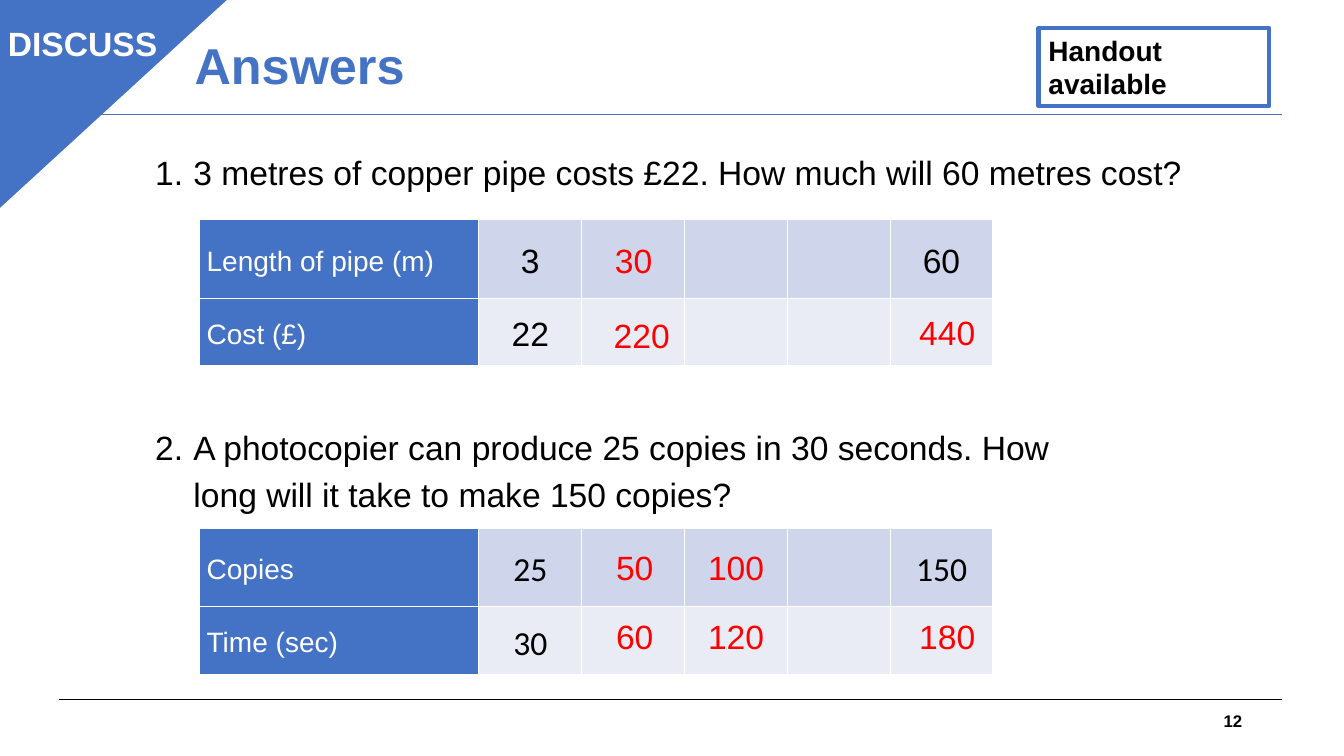
import pptx
import pptx.util
import pptx.dml.color
import pptx.enum.shapes
import pptx.enum.text
import pptx.oxml.ns
from lxml import etree

PX = 9144  # 100 px to the inch
Align = pptx.enum.text.PP_ALIGN
Anchor = pptx.enum.text.MSO_ANCHOR
Shape = pptx.enum.shapes.MSO_SHAPE
qn = pptx.oxml.ns.qn

theme = {
    "blue": "4472C4", "black": "000000", "white": "FFFFFF", "red": "FF0000",
    "bands": ["CFD5EA", "E9EBF5"],
    "font": "Arial", "alt": "Calibri",
    "title": 36, "body": 24, "label": 20, "number": 12,
}


def rgb(name):
    return pptx.dml.color.RGBColor.from_string(theme.get(name, name))


def write(frame, text, size, color, bold=False, align=Align.LEFT, font="font", space=None):
    """Fill a text frame or cell frame with one styled paragraph."""
    frame.text = text
    frame.word_wrap = True
    para = frame.paragraphs[0]
    para.alignment = align
    if space:
        para.line_spacing = space
    if space == 1.15:
        para.space_after = pptx.util.Pt(10)
    for run in para.runs:
        run.font.size = pptx.util.Pt(theme[size])
        run.font.name = theme[font]
        run.font.bold = bold
        run.font.color.rgb = rgb(color)
    return para


deck = pptx.Presentation()
deck.slide_width, deck.slide_height = 1333 * PX, 750 * PX
slide = deck.slides.add_slide(deck.slide_layouts[5])
shapes = slide.shapes

# Rules above and below the content
for y, color in [(694, "black"), (114, "blue")]:
    rule = shapes.add_connector(
        pptx.enum.shapes.MSO_CONNECTOR.STRAIGHT, 59 * PX, y * PX, 1272 * PX, y * PX)
    rule.line.color.rgb = rgb(color)
    rule.line.width = pptx.util.Pt(0.75)
    etree.SubElement(rule.element.spPr, qn("a:effectLst"))

# Title
title = shapes.title
title.left, title.top, title.width, title.height = [n * PX for n in (183, 12, 869, 111)]
write(title.text_frame, "Answers", "title", "blue", bold=True, space=0.9)
title.text_frame.vertical_anchor = Anchor.MIDDLE

# Corner flag and handout box
flag = shapes.add_shape(
    Shape.ISOSCELES_TRIANGLE, -3 * PX, -2 * PX, 229 * PX, 210 * PX)
flag.adjustments[0] = 0
flag.rotation = 180
flag.element.spPr.xfrm.set("flipH", "1")
flag.fill.solid()
flag.fill.fore_color.rgb = rgb("blue")

note = shapes.add_shape(Shape.RECTANGLE, 1030 * PX, 28 * PX, 229 * PX, 77 * PX)
note.fill.background()
write(note.text_frame, "Handout\vavailable", "label", "black", bold=True)
note.text_frame.vertical_anchor = Anchor.TOP

for shape, width in [(flag, 1), (note, 3)]:
    shape.shadow.inherit = False
    shape.line.color.rgb = rgb("blue")
    shape.line.width = pptx.util.Pt(width)

# Ratio tables
tables = [
    (218, "font", [["Length of pipe (m)", "3", "", "", "", "60"],
                   ["Cost (£)", "22", "", "", "", ""]]),
    (524, "alt", [["Copies", "25", "", "", "", "150"],
                  ["Time (sec)", "30", "", "", "", ""]]),
]
for top, font, rows in tables:
    table = shapes.add_table(2, 6, 198 * PX, top * PX, 787 * PX, 145 * PX).table
    table.first_row = table.horz_banding = False
    for col, width in zip(table.columns, [277] + [102] * 5):
        col.width = width * PX
    for r, (row, height) in enumerate(zip(rows, [78, 67])):
        table.rows[r].height = height * PX
        for c, text in enumerate(row):
            cell = table.cell(r, c)
            cell.fill.solid()
            cell.fill.fore_color.rgb = rgb(theme["bands"][r] if c else "blue")
            if not text:
                continue
            cell.vertical_anchor = Anchor.MIDDLE
            cell.margin_left = cell.margin_right = 7 * PX
            cell.margin_top = cell.margin_bottom = 0
            if c:
                write(cell.text_frame, text, "body", "black",
                      align=Align.CENTER, font=font, space=1.15)
            else:
                write(cell.text_frame, text, "label", "white", space=1.15)

# Text boxes: flag label, page number, questions, answers
center = {"size": "body", "color": "red", "align": Align.CENTER}
ask = {"size": "body", "color": "black", "space": 1.15}
boxes = [
    ("DISCUSS", -2, 18, 175, 50, {"size": "body", "color": "white", "bold": True}),
    ("12", 942, 695, 300, 40,
     {"size": "number", "color": "black", "bold": True, "align": Align.RIGHT}),
    ("3 metres of copper pipe costs £22. How much will 60 metres cost?",
     144, 140, 1064, 53, ask),
    ("A photocopier can produce 25 copies in 30 seconds. "
     "How long will it take to make 150 copies?", 144, 413, 968, 100, ask),
    ("30", 591, 233, 75, 50, center),
    ("220", 592, 308, 89, 50, center),
    ("440", 895, 305, 89, 50, center),
    ("50", 592, 538, 75, 50, center),
    ("60", 592, 606, 75, 50, center),
    ("100", 684, 538, 92, 50, center),
    ("120", 684, 606, 92, 50, center),
    ("180", 895, 606, 89, 50, center),
]
count = 0
for text, x, y, w, h, style in boxes:
    frame = shapes.add_textbox(x * PX, y * PX, w * PX, h * PX).text_frame
    para = write(frame, text, **style)
    if text == "12":
        frame.vertical_anchor = Anchor.MIDDLE
    else:
        frame.auto_size = pptx.enum.text.MSO_AUTO_SIZE.SHAPE_TO_FIT_TEXT
    if style is ask:
        count += 1
        props = para.runs[0].font and para._p.get_or_add_pPr()
        props.set("marL", str(38 * PX))
        props.set("indent", str(-38 * PX))
        etree.SubElement(props, qn("a:buFont"), typeface="+mj-lt")
        etree.SubElement(props, qn("a:buAutoNum"), type="arabicPeriod", startAt=str(count))

deck.save("out.pptx")
